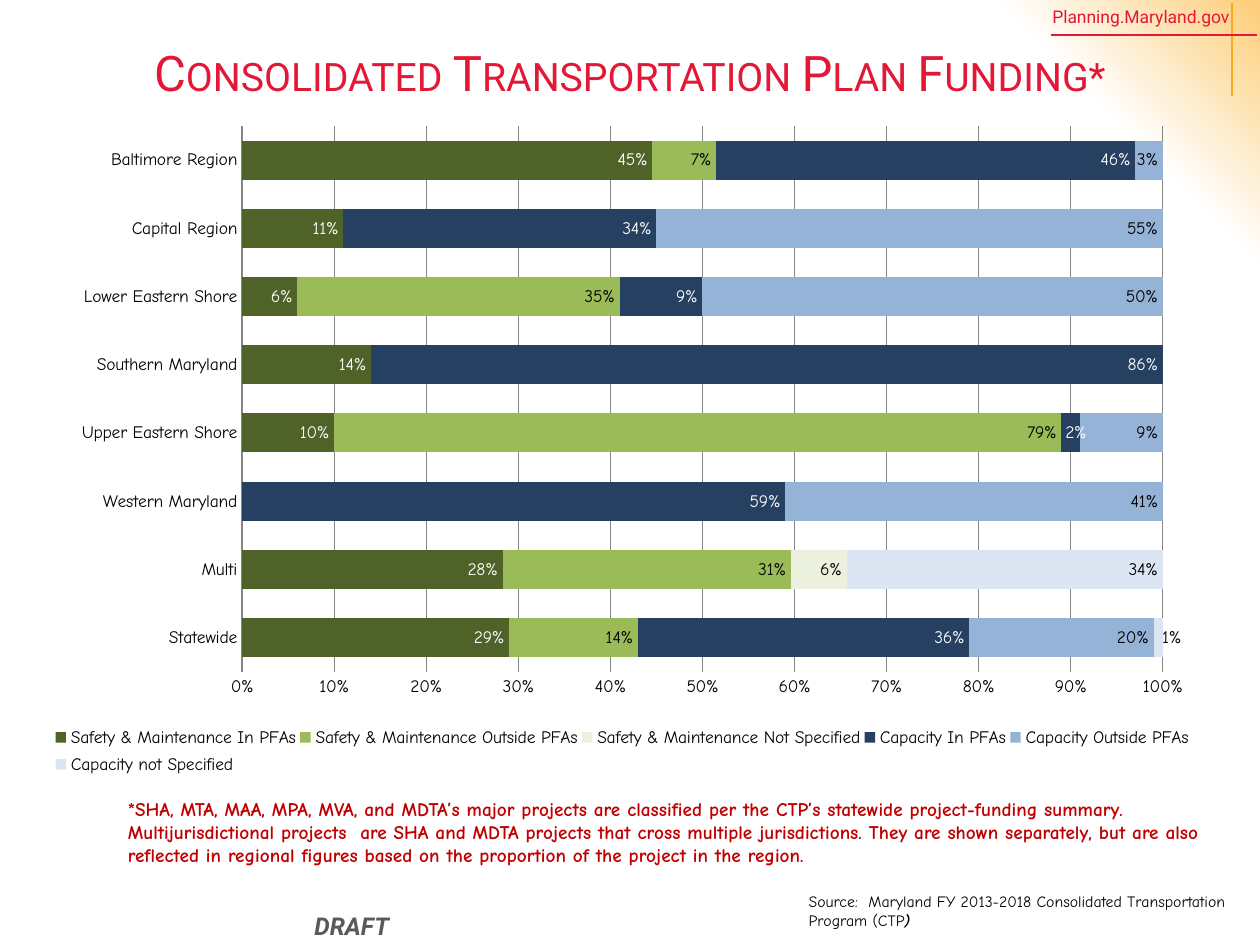
from copy import deepcopy
from dataclasses import dataclass, field

from lxml import etree
from pptx import Presentation
from pptx import util as u
from pptx.chart import data as chart_data
from pptx.dml import color as dml
from pptx.enum import chart as charts, shapes, text
from pptx.oxml import parse_xml
from pptx.oxml.ns import nsdecls, qn

RED, DARK_RED, GRAY, BLACK, WHITE = "E31837", "C00000", "868686", "000000", "FFFFFF"
HEAD_FONT, BODY_FONT = "Roboto", "Comic Neue"


@dataclass
class FundingSeries:
    name: str
    values: tuple[float, ...]
    color: str
    label_color: str = BLACK
    label_shifts: dict[int, float] = field(default_factory=dict)


@dataclass
class Rule:
    start: tuple[float, float]
    end: tuple[float, float]
    color: str


REGIONS = ["Statewide", "Multi", "Western Maryland", "Upper Eastern Shore",
           "Southern Maryland", "Lower Eastern Shore", "Capital Region", "Baltimore Region"]
# Label shifts are fractions of the chart width, keyed by region index
FUNDING = [
    FundingSeries("Safety & Maintenance In PFAs",
                  (0.29, 0.28, 0, 0.1, 0.14, 0.06, 0.11, 0.45), "4F6228", WHITE),
    FundingSeries("Safety & Maintenance Outside PFAs",
                  (0.14, 0.31, 0, 0.79, 0, 0.35, 0, 0.07), "9BBB59"),
    FundingSeries("Safety & Maintenance Not Specified",
                  (0, 0.06, 0, 0, 0, 0, 0, 0), "EBF1DE"),
    FundingSeries("Capacity In PFAs",
                  (0.36, 0, 0.59, 0.02, 0.86, 0.09, 0.34, 0.46), "254061", WHITE, {3: 0.01}),
    FundingSeries("Capacity Outside PFAs",
                  (0.2, 0, 0.41, 0.09, 0, 0.5, 0.55, 0.03), "95B3D7"),
    FundingSeries("Capacity not Specified",
                  (0.01, 0.34, 0, 0, 0, 0, 0, 0), "DCE6F2", BLACK, {0: 0.02}),
]
HEADER_RULES = [Rule((704, 2), (704, 55), "FBAA1B"), Rule((600.5, 20), (718.5, 20), RED)]


def rgb(value: str) -> dml.RGBColor:
    return dml.RGBColor.from_string(value)


def set_font(font, size: float, name: str, color: str, bold=False, italic=False) -> None:
    font.size, font.name = u.Pt(size), name
    font.bold, font.italic = bold, italic
    font.color.rgb = rgb(color)


def add_run(paragraph, content: str, **font_format):
    run = paragraph.add_run()
    run.text = content
    set_font(run.font, **font_format)
    return run


def add_text(slide, content: str, left, top, width, height, *,
             align=text.PP_ALIGN.LEFT, insets=(7.2, 3.6, 7.2, 3.6), **font_format):
    box = slide.shapes.add_textbox(*map(u.Pt, (left, top, width, height)))
    frame = box.text_frame
    frame.word_wrap = True
    (frame.margin_left, frame.margin_top,
     frame.margin_right, frame.margin_bottom) = map(u.Pt, insets)
    paragraph = frame.paragraphs[0]
    paragraph.alignment = align
    add_run(paragraph, content, **font_format)
    return paragraph


def add_rule(slide, rule: Rule) -> None:
    line = slide.shapes.add_connector(shapes.MSO_CONNECTOR.STRAIGHT,
                                      *map(u.Pt, rule.start + rule.end))
    line.line.color.rgb = rgb(rule.color)
    line.line.width = u.Pt(1)
    etree.SubElement(line._element.spPr, qn("a:effectLst"))


def manual_layout(x: float, y: float, width: float, height: float, inner=False):
    target = '<c:layoutTarget val="inner"/>' if inner else ""
    return parse_xml(
        f'<c:layout {nsdecls("c")}><c:manualLayout>{target}'
        '<c:xMode val="edge"/><c:yMode val="edge"/>'
        f'<c:x val="{x}"/><c:y val="{y}"/><c:w val="{width}"/><c:h val="{height}"/>'
        '</c:manualLayout></c:layout>')


def set_layout(parent, layout, position: int) -> None:
    for old in parent.findall(qn("c:layout")):
        parent.remove(old)
    parent.insert(position, layout)


def format_series(series, funding: FundingSeries) -> None:
    series.format.fill.solid()
    series.format.fill.fore_color.rgb = rgb(funding.color)
    labels = series.data_labels
    labels.show_value = True
    labels.number_format, labels.number_format_is_linked = "0%", False
    labels.position = charts.XL_LABEL_POSITION.INSIDE_END
    set_font(labels.font, 10, BODY_FONT, funding.label_color)

    # Zero values lose their label; narrow bars have theirs moved aside
    label_list = series._element.find(qn("c:dLbls"))
    shared = [child for child in label_list if child.tag != qn("c:showLeaderLines")]
    special = []
    for index, value in enumerate(funding.values):
        if value and index not in funding.label_shifts:
            continue
        body = '<c:delete val="1"/>'
        if value:
            body = ('<c:layout><c:manualLayout>'
                    f'<c:x val="{funding.label_shifts[index]}"/><c:y val="0"/>'
                    '</c:manualLayout></c:layout>')
        label = parse_xml(f'<c:dLbl {nsdecls("c")}><c:idx val="{index}"/>{body}</c:dLbl>')
        if value:
            label.extend(deepcopy(shared))
        special.append(label)
    for position, label in enumerate(special):
        label_list.insert(position, label)


def add_funding_chart(slide) -> None:
    values = chart_data.CategoryChartData(number_format="0%")
    values.categories = REGIONS
    for funding in FUNDING:
        values.add_series(funding.name, funding.values)
    chart = slide.shapes.add_chart(charts.XL_CHART_TYPE.BAR_STACKED_100,
                                   *map(u.Pt, (22.5, 60, 666, 386.5)), values).chart
    set_font(chart.font, 10, BODY_FONT, BLACK)
    chart.has_title = False
    plot = chart.plots[0]
    plot.gap_width, plot.overlap = 75, 100
    for series, funding in zip(plot.series, FUNDING):
        format_series(series, funding)

    # Axes
    for axis in (chart.category_axis, chart.value_axis):
        axis.major_tick_mark = axis.minor_tick_mark = charts.XL_TICK_MARK.NONE
    chart.category_axis.format.line.color.rgb = rgb(GRAY)
    chart.category_axis.has_major_gridlines = False
    axis = chart.value_axis
    axis.minimum_scale, axis.maximum_scale, axis.major_unit = 0, 1, 0.1
    axis.tick_labels.number_format, axis.tick_labels.number_format_is_linked = "0%", False
    axis.format.line.fill.background()
    axis.has_major_gridlines = True
    axis.major_gridlines.format.line.color.rgb = rgb(GRAY)

    # Legend and plot area
    chart.has_legend = True
    chart.legend.position = charts.XL_LEGEND_POSITION.BOTTOM
    chart.legend.include_in_layout = False
    set_layout(chart.legend._element, manual_layout(0.01, 0.91, 0.98, 0.09), 1)
    plot_area = chart._chartSpace.chart.plotArea
    set_layout(plot_area, manual_layout(0.174, 0.031, 0.79, 0.807, inner=True), 0)


def set_background(slide) -> None:
    fill = slide.background.fill
    fill.gradient()
    fill.gradient_angle = 225
    for stop, position, color in zip(fill.gradient_stops, (0, 0.12), ("FDCD77", WHITE)):
        stop.position = position
        stop.color.rgb = rgb(color)
    first_color = next(slide._element.iter(qn("a:srgbClr")))
    etree.SubElement(first_color, qn("a:alpha"), val="50000")


def main() -> None:
    presentation = Presentation()
    presentation.slide_width, presentation.slide_height = u.Pt(720), u.Pt(540)
    slide = presentation.slides.add_slide(presentation.slide_layouts[5])
    set_background(slide)

    # Header and draft mark
    for rule in HEADER_RULES:
        add_rule(slide, rule)
    add_text(slide, "Planning.Maryland.gov", 528.5, 3.5, 174, 12, insets=(7.2, 0, 0, 0),
             align=text.PP_ALIGN.RIGHT, size=10, name=HEAD_FONT, color=RED)
    add_text(slide, "DRAFT", 114, 517, 174, 23, align=text.PP_ALIGN.CENTER,
             size=14, name=HEAD_FONT, color="595959", bold=True, italic=True)

    # Title
    title = slide.shapes.title
    title.left, title.top, title.width, title.height = map(u.Pt, (36, 18, 648, 46))
    title.text_frame.vertical_anchor = text.MSO_ANCHOR.MIDDLE
    paragraph = title.text_frame.paragraphs[0]
    paragraph.alignment = text.PP_ALIGN.CENTER
    run = add_run(paragraph, "Consolidated Transportation Plan Funding*",
                  size=28, name=HEAD_FONT, color=RED)
    run.font._element.set("cap", "small")

    add_funding_chart(slide)

    # Footnote and source
    add_text(slide, "*SHA, MTA, MAA, MPA, MVA, and MDTA’s major projects are classified per the "
             "CTP’s statewide project-funding summary. Multijurisdictional projects  are SHA and "
             "MDTA projects that cross multiple jurisdictions. They are shown separately, but are "
             "also reflected in regional figures based on the proportion of the project in the "
             "region.", 66, 452, 639.5, 47.5, size=11, name=BODY_FONT, color=DARK_RED, bold=True)
    source_format = dict(size=9, name=BODY_FONT, color=BLACK)
    source = add_text(slide, "Source:  Maryland FY 2013-2018 Consolidated Transportation "
                      "Program (CTP", 455, 506, 258.5, 29, **source_format)
    add_run(source, ")", bold=True, italic=True, **source_format)

    presentation.save("out.pptx")


if __name__ == "__main__":
    main()
